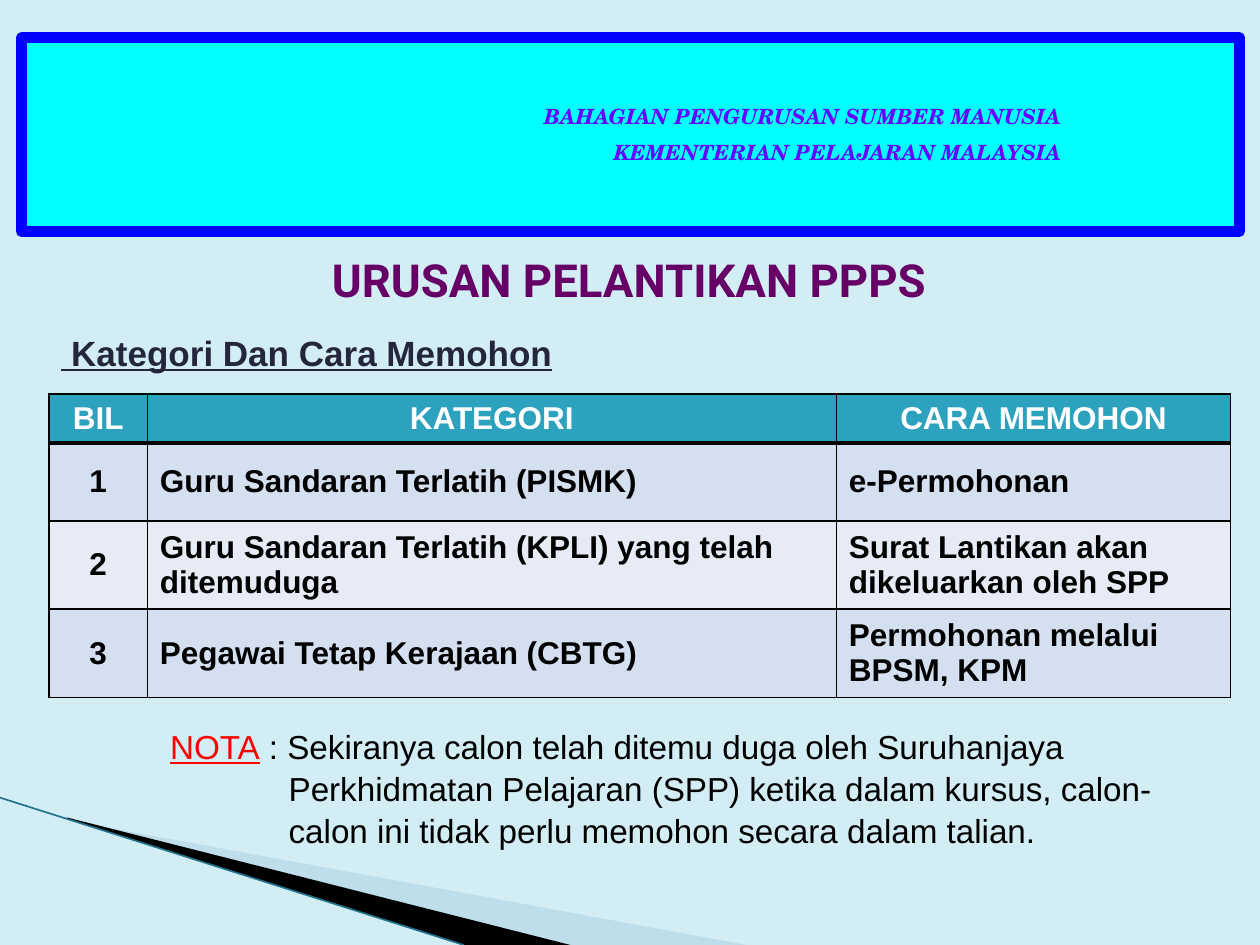
"""Build the slide on categories and ways of applying for PPPS appointments."""
from lxml import etree
from pptx import Presentation
from pptx.dml.color import RGBColor
from pptx.enum.shapes import MSO_CONNECTOR, MSO_SHAPE
from pptx.enum.text import MSO_ANCHOR, MSO_AUTO_SIZE, PP_ALIGN
from pptx.oxml.ns import qn
from pptx.util import Cm, Pt

LEFT, CENTER, RIGHT = PP_ALIGN.LEFT, PP_ALIGN.CENTER, PP_ALIGN.RIGHT
TOP, MIDDLE = MSO_ANCHOR.TOP, MSO_ANCHOR.MIDDLE
NO_AUTOFIT = MSO_AUTO_SIZE.NONE
RECTANGLE = MSO_SHAPE.RECTANGLE
STRAIGHT = MSO_CONNECTOR.STRAIGHT

BACKGROUND = RGBColor(0xD2, 0xED, 0xF4)
SWOOSH = RGBColor(0xA0, 0xCB, 0xDC)
SWOOSH_LINE = RGBColor(0x21, 0x72, 0x8A)
BLACK = RGBColor(0x00, 0x00, 0x00)
WHITE = RGBColor(0xFF, 0xFF, 0xFF)
CYAN = RGBColor(0x00, 0xFF, 0xFF)
BLUE = RGBColor(0x00, 0x00, 0xFF)
VIOLET = RGBColor(0x66, 0x00, 0xFF)
PURPLE = RGBColor(0x66, 0x00, 0x66)
NAVY = RGBColor(0x24, 0x26, 0x3C)
RED = RGBColor(0xFF, 0x00, 0x00)
HEADER_FILL = RGBColor(0x2D, 0xA2, 0xBF)
BAND_FILLS = (RGBColor(0xE7, 0xEB, 0xF5), RGBColor(0xD4, 0xDF, 0xEF))

ROWS = (
    ("BIL", "KATEGORI", "CARA MEMOHON"),
    ("1", "Guru Sandaran Terlatih (PISMK)", "e-Permohonan"),
    ("2", "Guru Sandaran Terlatih (KPLI) yang telah ditemuduga",
     "Surat Lantikan akan dikeluarkan oleh SPP"),
    ("3", "Pegawai Tetap Kerajaan (CBTG)", "Permohonan melalui BPSM, KPM"),
)
COLUMN_WIDTHS = (1.98, 13.89, 7.95)
ROW_HEIGHTS = (0.99, 1.57, 1.78, 1.78)
NOTE = (
    " : Sekiranya calon telah ditemu duga oleh Suruhanjaya Perkhidmatan Pelajaran (SPP) "
    "ketika dalam kursus, calon-calon ini tidak perlu memohon secara dalam talian."
)


def set_font(font, name, size, color, bold=False):
    """Set the typeface, size, colour and weight of a font."""
    font.name = name
    font.size = Pt(size)
    font.bold = bold
    font.color.rgb = color


def place(shape, left, top, width, height):
    """Move a text shape and prepare its frame."""
    shape.left, shape.top = Cm(left), Cm(top)
    shape.width, shape.height = Cm(width), Cm(height)
    frame = shape.text_frame
    frame.word_wrap = True
    frame.auto_size = NO_AUTOFIT
    frame.vertical_anchor = TOP
    return frame


def add_text_box(slide, left, top, width, height):
    """Add a wrapping text box and return its frame."""
    return place(slide.shapes.add_textbox(0, 0, 0, 0), left, top, width, height)


def add_swoosh(slide, points, color, opacity=100):
    """Add a filled polygon without outline."""
    start, *rest = [(Cm(x), Cm(y)) for x, y in points]
    builder = slide.shapes.build_freeform(*start)
    builder.add_line_segments(rest, close=True)
    shape = builder.convert_to_shape()
    shape.shadow.inherit = False
    shape.fill.solid()
    shape.fill.fore_color.rgb = color
    shape.line.fill.background()
    if opacity < 100:
        color_element = shape._element.spPr.find(qn("a:solidFill"))[0]
        etree.SubElement(color_element, qn("a:alpha"), val=str(opacity * 1000))


def add_line(slide, start, end, color, width):
    """Add a straight line without shadow."""
    line = slide.shapes.add_connector(STRAIGHT, *map(Cm, start + end))
    line.line.color.rgb = color
    line.line.width = Pt(width)
    etree.SubElement(line._element.spPr, qn("a:effectLst"))


def add_banner(slide):
    """Add the framed banner with the department's name."""
    shape = slide.shapes.add_shape(RECTANGLE, Cm(0.43), Cm(0.76), Cm(24.56), Cm(3.91))
    shape.shadow.inherit = False
    shape.fill.solid()
    shape.fill.fore_color.rgb = CYAN
    shape.line.color.rgb = BLUE
    shape.line.width = Pt(6)
    frame = add_text_box(slide, 8.97, 1.96, 12.8, 1.57)
    frame.text = "BAHAGIAN PENGURUSAN SUMBER MANUSIA \nKEMENTERIAN PELAJARAN MALAYSIA "
    for paragraph in frame.paragraphs:
        paragraph.alignment = RIGHT
        set_font(paragraph.font, "TeX Gyre Schola", 12, VIOLET, bold=True)
        paragraph.font.italic = True
    frame.paragraphs[1].space_before = Pt(6)


def add_borders(cell, widths):
    """Draw black left, right, top and bottom borders, widths in points."""
    properties = cell._tc.get_or_add_tcPr()
    for side, width in zip("LRTB", widths):
        line = etree.SubElement(properties, qn(f"a:ln{side}"), w=str(Pt(width)))
        fill = etree.SubElement(line, qn("a:solidFill"))
        etree.SubElement(fill, qn("a:srgbClr"), val=str(BLACK))


def add_category_table(slide):
    """Add the table of categories and ways to apply."""
    table = slide.shapes.add_table(
        len(ROWS), len(COLUMN_WIDTHS), Cm(0.99), Cm(7.94),
        Cm(sum(COLUMN_WIDTHS)), Cm(sum(ROW_HEIGHTS))).table
    for column, width in zip(table.columns, COLUMN_WIDTHS):
        column.width = Cm(width)
    for row_index, texts in enumerate(ROWS):
        table.rows[row_index].height = Cm(ROW_HEIGHTS[row_index])
        is_header = row_index == 0
        for column_index, text in enumerate(texts):
            cell = table.cell(row_index, column_index)
            cell.text = text
            cell.vertical_anchor = MIDDLE
            add_borders(cell, (1, 1, 3 if row_index == 1 else 1, 3 if is_header else 1))
            cell.fill.solid()
            cell.fill.fore_color.rgb = HEADER_FILL if is_header else BAND_FILLS[row_index % 2]
            paragraph = cell.text_frame.paragraphs[0]
            paragraph.alignment = CENTER if is_header or column_index == 0 else LEFT
            set_font(paragraph.font, "Arial", 18, WHITE if is_header else BLACK, bold=True)


def add_note(slide):
    """Add the note with its hanging indent."""
    paragraph = add_text_box(slide, 3.18, 14.48, 21.44, 2.69).paragraphs[0]
    properties = paragraph._p.get_or_add_pPr()
    properties.set("marL", str(Cm(2.39)))
    properties.set("indent", str(-Cm(2.39)))
    paragraph.line_spacing = 1.05
    for text, color in (("NOTA", RED), (NOTE, BLACK)):
        run = paragraph.add_run()
        run.text = text
        set_font(run.font, "Arial", 19, color)
        run.font.underline = color == RED


def add_headings(slide):
    """Fill the title and add the underlined subheading."""
    frame = place(slide.shapes.title, 0.58, 4.95, 24.21, 1.37)
    frame.text = "URUSAN PELANTIKAN PPPS"
    frame.paragraphs[0].alignment = CENTER
    set_font(frame.paragraphs[0].font, "Roboto", 26, PURPLE, bold=True)
    frame = add_text_box(slide, 0.99, 6.55, 23.06, 1.12)
    frame.text = " Kategori Dan Cara Memohon"
    set_font(frame.paragraphs[0].font, "Arial", 20, NAVY, bold=True)
    frame.paragraphs[0].font.underline = True


def main():
    """Build and save the presentation."""
    presentation = Presentation()
    presentation.slide_width, presentation.slide_height = Cm(25.4), Cm(19.05)
    slide = presentation.slides.add_slide(presentation.slide_layouts[5])
    slide.background.fill.solid()
    slide.background.fill.fore_color.rgb = BACKGROUND
    add_swoosh(slide, ((1.4, 16.54), (15.05, 19.05), (11.5, 19.05), (1.4, 16.51)), SWOOSH, 40)
    add_swoosh(slide, ((1.35, 16.48), (11.5, 19.05), (9.35, 19.05), (1.37, 16.51)), BLACK)
    add_line(slide, (0, 16.08), (9.35, 19.05), SWOOSH_LINE, 0.95)
    add_banner(slide)
    add_headings(slide)
    add_category_table(slide)
    add_note(slide)
    presentation.save("out.pptx")


if __name__ == "__main__":
    main()
